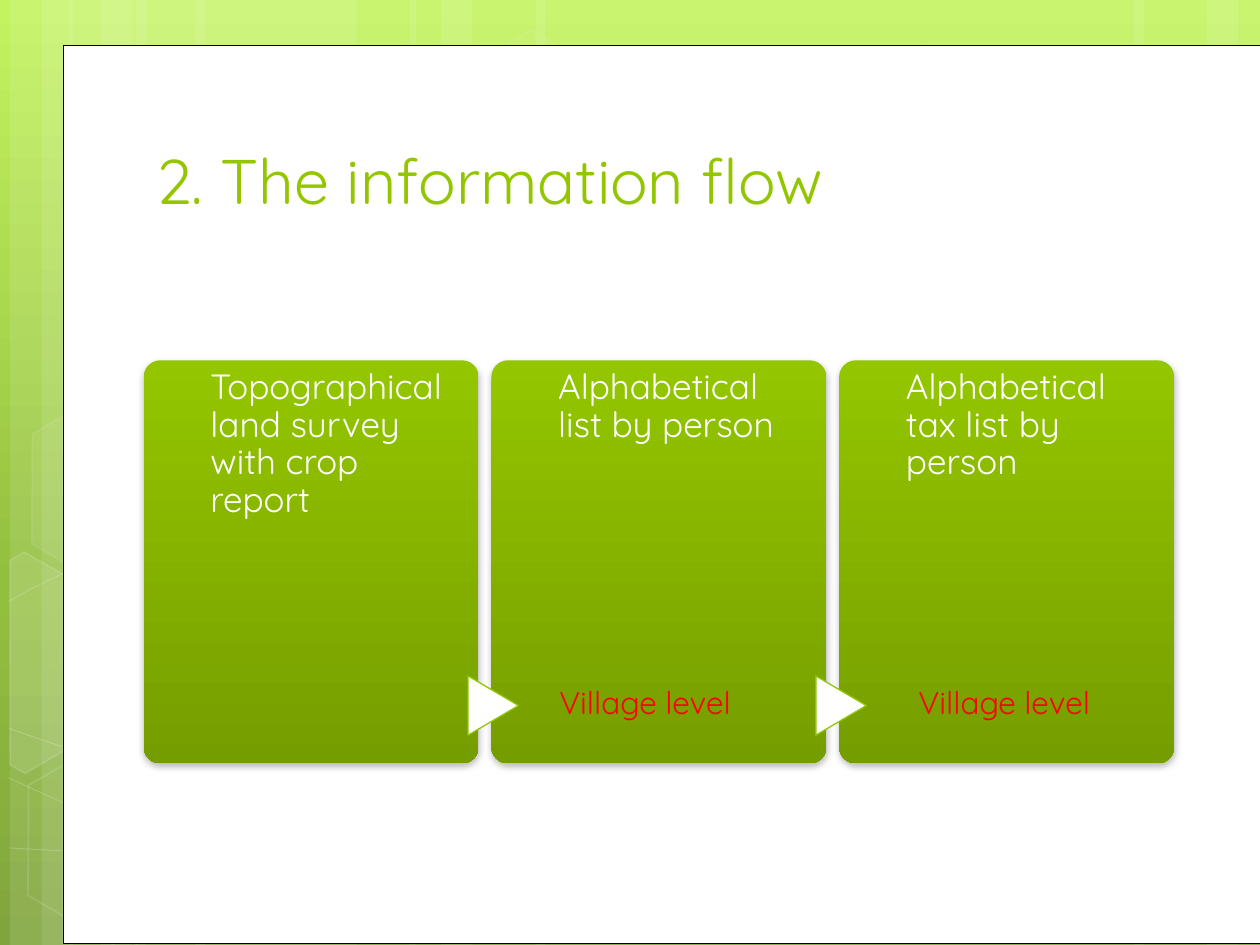
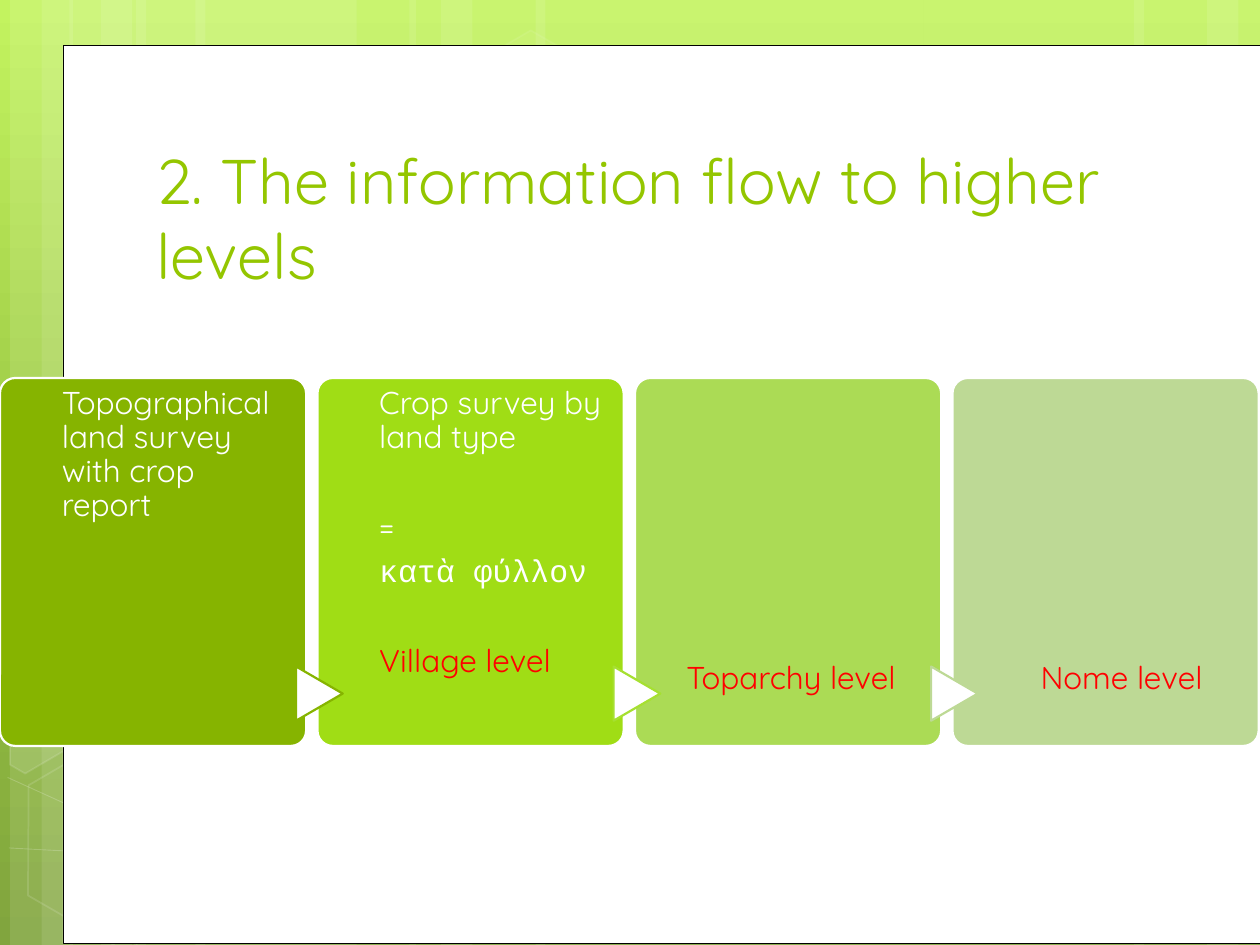
from dataclasses import dataclass

from lxml import etree
from pptx import Presentation
from pptx.dml.color import RGBColor
from pptx.enum.shapes import MSO_SHAPE
from pptx.enum.text import MSO_ANCHOR, MSO_AUTO_SIZE, PP_ALIGN
from pptx.oxml.ns import qn
from pptx.util import Inches, Pt

RECT, HEXAGON = MSO_SHAPE.RECTANGLE, MSO_SHAPE.HEXAGON
ROUNDED, TRIANGLE = MSO_SHAPE.ROUNDED_RECTANGLE, MSO_SHAPE.FLOWCHART_EXTRACT
TOP, LEFT = MSO_ANCHOR.TOP, PP_ALIGN.LEFT
NO_FIT, GROW = MSO_AUTO_SIZE.NONE, MSO_AUTO_SIZE.SHAPE_TO_FIT_TEXT

TITLE_ONLY = 5
FONT, GREEK_FONT = "Quicksand", "Courier New"
COLORS = {
    "white": "FFFFFF", "black": "000000", "red": "FF0000",
    "green": "94C600", "green_dark": "769D00",
    "step1": "86B400", "step2": "A0DD15", "step3": "ABDB55", "step4": "BDD995",
    "arrow2": "A6E031",
    "bg_top": "C3F35F", "bg_mid": "93BF3F", "bg_bottom": "81A53E",
}

# Backdrop: stripes are (left, width); hexagons are (left, top, fill %, line %)
STRIPES = [(1.08, 1.75), (0.08, 0.5), (0.33, 0.83), (1.55, 1.75), (0.55, 0.5), (0.8, 0.83),
           (7.33, 1.75), (9.58, 0.5), (9, 0.83), (4.25, 3.08), (3.25, 0.5), (3.5, 0.83)]
HEXAGONS = [(3.34, 0.36, 4, 8), (0.11, 5.91, 0, 12), (0.14, 3.12, 7, 8)]
CUT_HEXAGON = [(0.08, 4.45), (0.19, 4.38), (0.96, 4.82), (0.95, 5.7), (0.2, 6.14), (0.08, 6.07)]
# Each curve: a start point, then three points for every cubic Bézier segment
CURVES = [
    [(0.07, 6.73), (0.61, 6.76), (1.15, 6.79), (1.9, 6.78), (2.65, 6.77), (3.58, 6.75),
     (4.58, 6.65), (5.58, 6.55), (7, 6.36), (7.92, 6.17), (8.83, 5.98), (9.77, 5.68),
     (10.07, 5.51)],
    [(0.07, 4.77), (0.36, 4.61), (0.65, 4.46), (1.21, 4.31), (1.78, 4.16), (2.59, 3.94),
     (3.47, 3.87), (4.36, 3.8), (5.44, 3.79), (6.54, 3.87), (7.64, 3.95), (9.47, 4.26),
     (10.07, 4.34)],
    [(0.06, 6.17), (1.27, 6.72), (2.47, 7.27), (3.34, 7.49)],
    [(0.07, 5.78), (0.38, 5.89), (0.7, 6), (1.28, 6.16), (1.86, 6.31), (2.73, 6.56),
     (3.57, 6.73), (4.4, 6.9), (5.45, 7.08), (6.28, 7.18), (7.11, 7.29), (8, 7.33),
     (8.53, 7.36), (9.05, 7.4), (9.19, 7.38), (9.45, 7.38), (9.71, 7.37), (9.89, 7.35),
     (10.07, 7.34)],
]


@dataclass
class Line:
    text: str
    color: str = "white"
    font: str = FONT
    before: float = 0


@dataclass
class Card:
    lines: list[Line]
    fill: str = ""          # empty: the green gradient with a shadow
    arrow: str = "green"    # outline of the arrow leading into the card


@dataclass
class Flow:
    """Geometry of a row of cards; text and arrow offsets run from a card's left edge."""
    left: float
    top: float
    width: float
    height: float
    pitch: float
    text_dx: float
    text_width: float
    arrow_dx: float
    arrow_top: float
    arrow_width: float
    arrow_height: float
    line_width: float
    size: int


@dataclass
class Label:
    text: str
    left: float
    top: float
    width: float


def rgb(name: str) -> RGBColor:
    return RGBColor.from_string(COLORS[name])


def set_alpha(parent, percent: int) -> None:
    """Make the solid fill directly under a spPr or ln element see-through."""
    clr = parent.find(f"{qn('a:solidFill')}/{qn('a:srgbClr')}")
    etree.SubElement(clr, qn("a:alpha"), val=str(percent * 1000))


def set_gradient(owner, stops: list[tuple[int, str]]) -> None:
    """Fill a shape or background from top to bottom."""
    fill = owner.fill
    fill.gradient()
    fill.gradient_angle = 270
    gs_list = owner.element.find(f".//{qn('a:gsLst')}")
    for gs in list(gs_list):
        gs_list.remove(gs)
    for percent, name in stops:
        gs = etree.SubElement(gs_list, qn("a:gs"), pos=str(percent * 1000))
        etree.SubElement(gs, qn("a:srgbClr"), val=COLORS[name])


def paint(sp, fill: str = "", line: str = "", width: float = 1,
          fill_alpha: int = 100, line_alpha: int = 100) -> None:
    sp.shadow.inherit = False
    if fill:
        sp.fill.solid()
        sp.fill.fore_color.rgb = rgb(fill)
        if fill_alpha < 100:
            set_alpha(sp.element.spPr, fill_alpha)
    else:
        sp.fill.background()
    if line:
        sp.line.color.rgb = rgb(line)
        sp.line.width = Pt(width)
        if line_alpha < 100:
            set_alpha(sp.element.spPr.find(qn("a:ln")), line_alpha)
    else:
        sp.line.fill.background()


def add_shape(slide, kind, left: float, top: float, width: float, height: float):
    return slide.shapes.add_shape(kind, Inches(left), Inches(top), Inches(width), Inches(height))


def add_outline(slide, points: list[tuple[float, float]], close: bool):
    pts = [(Inches(x), Inches(y)) for x, y in points]
    builder = slide.shapes.build_freeform(*pts[0])
    builder.add_line_segments(pts[1:], close=close)
    return builder.convert_to_shape()


def add_curve(slide, nodes: list[tuple[float, float]]):
    """Add an open outline whose nodes are joined, three by three, into cubic Béziers."""
    sp = add_outline(slide, nodes, False)
    segments = sp.element.findall(f".//{qn('a:lnTo')}")
    for i in range(0, len(segments), 3):
        first, *others = segments[i:i + 3]
        first.tag = qn("a:cubicBezTo")
        for segment in others:
            first.append(segment[0])
            segment.getparent().remove(segment)
    return sp


def build_backdrop(slide, layout) -> None:
    """Draw the shared backdrop on the slide, then move it to the layout."""
    set_gradient(layout.background, [(0, "bg_top"), (62, "bg_mid"), (100, "bg_bottom")])
    for ph in list(layout.placeholders)[1:]:
        layout.shapes.element.remove(ph.element)

    for left, width in STRIPES:
        paint(add_shape(slide, RECT, left, 0, width, 7.5), "white", fill_alpha=10)
    for nodes in CURVES:
        paint(add_curve(slide, nodes), line="white", width=0.5, line_alpha=20)
    for left, top, fill_alpha, line_alpha in HEXAGONS:
        sp = add_shape(slide, HEXAGON, left, top, 1.75, 1.52)
        sp.adjustments[0] = 0.285
        sp.rotation = 30
        paint(sp, "white" if fill_alpha else "", "white", 1, fill_alpha, line_alpha)
    paint(add_outline(slide, CUT_HEXAGON, True), "white", "white", 1, 10, 12)
    paint(add_shape(slide, RECT, 0.5, 0.36, 9.56, 7.13), "white", "black", 0.5)

    for sp in list(slide.shapes):
        if not sp.is_placeholder:
            layout.shapes.element.append(sp.element)


def format_runs(p, size: int, color: str, font: str = FONT) -> None:
    for r in p.runs:
        r.font.size = Pt(size)
        r.font.name = font
        r.font.color.rgb = rgb(color)


def set_title(slide, text: str) -> None:
    sp = slide.shapes.title
    sp.left, sp.top, sp.width, sp.height = (Inches(v) for v in (1.14, 1.12, 8.18, 1.25))
    tf = sp.text_frame
    tf.text = text
    tf.auto_size = NO_FIT
    tf.vertical_anchor = TOP
    tf.margin_top = 0
    p = tf.paragraphs[0]
    p.alignment = LEFT
    format_runs(p, 36, "green")


def add_card_text(slide, left: float, flow: Flow, lines: list[Line]) -> None:
    sp = slide.shapes.add_textbox(Inches(left), Inches(flow.top),
                                  Inches(flow.text_width), Inches(flow.height))
    tf = sp.text_frame
    tf.word_wrap = True
    tf.margin_left = tf.margin_right = tf.margin_bottom = 0
    tf.margin_top = Inches(0.07)
    for i, line in enumerate(lines):
        p = tf.add_paragraph() if i else tf.paragraphs[0]
        p.text = line.text
        p.line_spacing = 0.9
        p.space_after = Pt(0.35 * flow.size)
        if line.before:
            p.space_before = Pt(line.before)
        format_runs(p, flow.size, line.color, line.font)


def add_card_shadow(sp) -> None:
    effects = sp.element.spPr.find(qn("a:effectLst"))
    shadow = etree.SubElement(effects, qn("a:outerShdw"), blurRad=str(Pt(4)), dist=str(Pt(2)),
                              dir="5400000", rotWithShape="0")
    clr = etree.SubElement(shadow, qn("a:srgbClr"), val=COLORS["black"])
    etree.SubElement(clr, qn("a:alpha"), val="28000")


def add_flow(slide, flow: Flow, cards: list[Card]) -> None:
    for i, card in enumerate(cards):
        left = flow.left + i * flow.pitch
        sp = add_shape(slide, ROUNDED, left, flow.top, flow.width, flow.height)
        sp.adjustments[0] = 0.05
        if card.fill:
            paint(sp, card.fill, "white", flow.line_width)
        else:
            paint(sp)
            set_gradient(sp, [(0, "green"), (100, "green_dark")])
            add_card_shadow(sp)
        if i:
            arrow = add_shape(slide, TRIANGLE, left + flow.arrow_dx, flow.arrow_top,
                              flow.arrow_width, flow.arrow_height)
            arrow.rotation = 90
            paint(arrow, "white", card.arrow, flow.line_width)
        if card.lines:
            add_card_text(slide, left + flow.text_dx, flow, card.lines)


def add_label(slide, label: Label) -> None:
    sp = slide.shapes.add_textbox(Inches(label.left), Inches(label.top),
                                  Inches(label.width), Inches(0.4))
    tf = sp.text_frame
    tf.text = label.text
    tf.word_wrap = False
    tf.auto_size = GROW
    format_runs(tf.paragraphs[0], 18, "red")


SURVEY = Line("Topographical land survey with crop report")
VILLAGE_FLOW = Flow(1.14, 2.86, 2.66, 3.2, 2.76, 0.53, 1.98, -0.22, 5.4, 0.47, 0.4, 0.75, 20)
VILLAGE_CARDS = [
    Card([SURVEY]),
    Card([Line("Alphabetical list by person")]),
    Card([Line("Alphabetical tax list by person")]),
]
VILLAGE_LABELS = [Label("Village level", left, 5.37, 1.68) for left in (4.34, 7.19)]

HIGHER_FLOW = Flow(0, 3, 2.43, 2.92, 2.52, 0.49, 1.81, -0.2, 5.32, 0.43, 0.37, 1.25, 18)
HIGHER_CARDS = [
    Card([SURVEY], "step1"),
    Card([Line("Crop survey by land type"),
          Line("=", before=25.5),
          Line("κατὰ φύλλον", font=GREEK_FONT),
          Line("Village level", "red", before=25.5)], "step2", "step1"),
    Card([], "step3", "arrow2"),
    Card([], "step4", "step4"),
]
HIGHER_LABELS = [Label("Toparchy level", 5.35, 5.17, 1.97), Label("Nome level", 8.16, 5.17, 1.59)]

SLIDES = [
    ("2. The information flow", VILLAGE_FLOW, VILLAGE_CARDS, VILLAGE_LABELS),
    ("2. The information flow to higher levels", HIGHER_FLOW, HIGHER_CARDS, HIGHER_LABELS),
]


def main() -> None:
    prs = Presentation()
    prs.slide_width, prs.slide_height = Inches(10), Inches(7.5)
    layout = prs.slide_layouts[TITLE_ONLY]
    for i, (title, flow, cards, labels) in enumerate(SLIDES):
        slide = prs.slides.add_slide(layout)
        if i == 0:
            build_backdrop(slide, layout)
        set_title(slide, title)
        add_flow(slide, flow, cards)
        for label in labels:
            add_label(slide, label)
    prs.save("out.pptx")


if __name__ == "__main__":
    main()
